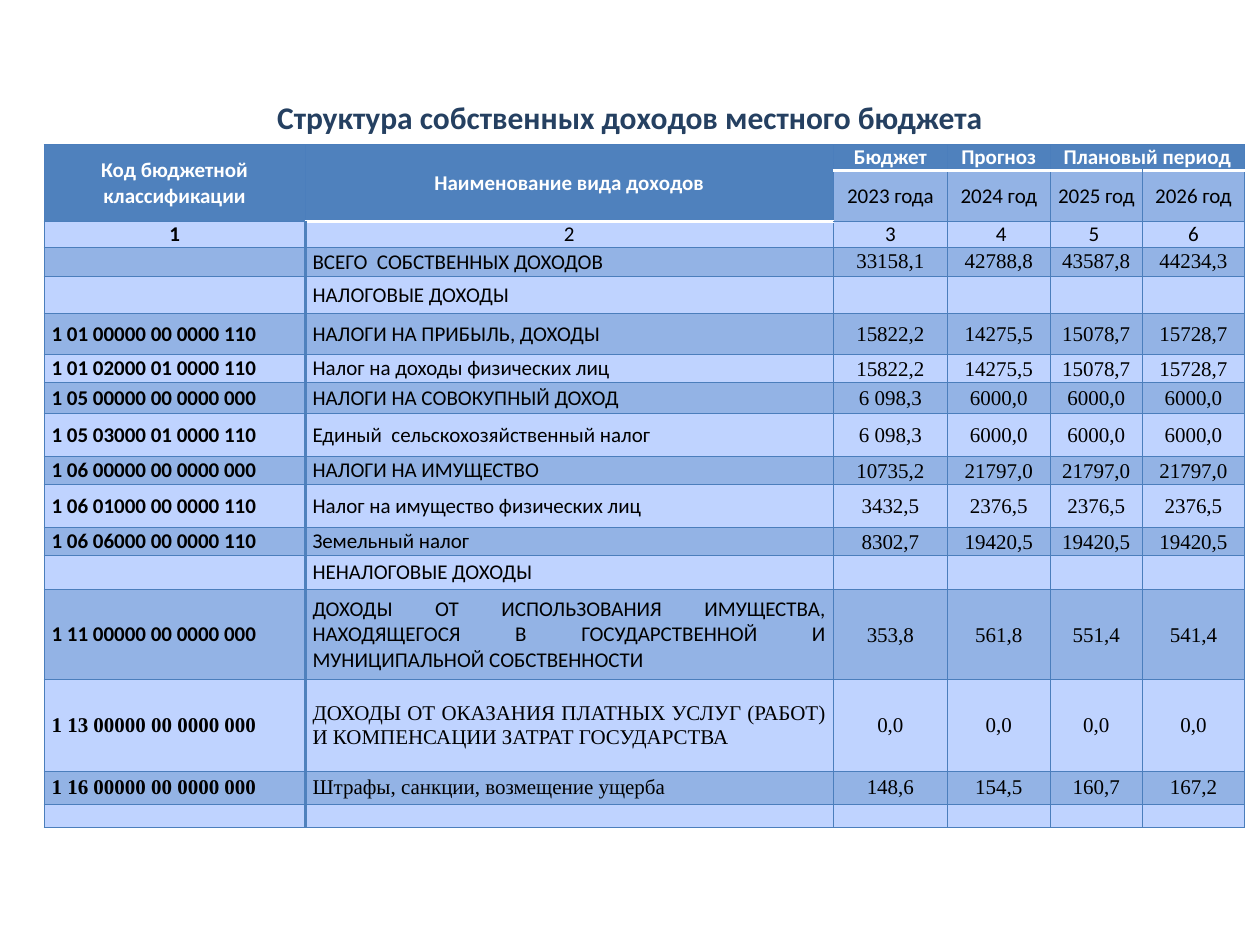
from lxml import etree
from pptx import Presentation
from pptx.dml.color import RGBColor
from pptx.enum import text as tx
from pptx.oxml import ns
from pptx.util import Cm, Pt

HUES = {"head": "4F81BD", "dark": "93B3E5", "light": "BFD3FF", "line": "4B7EBC",
        "white": "FFFFFF", "black": "000000", "title": "254061"}
SANS, SERIF = "Calibri", "Times New Roman"
MID, LOW = tx.MSO_ANCHOR.MIDDLE, tx.MSO_ANCHOR.BOTTOM
CENTER, JUST = tx.PP_ALIGN.CENTER, tx.PP_ALIGN.JUSTIFY
COLS = [5.26, 10.65, 2.3, 2.07, 1.86, 2.06]
HIGH = [0.52, 1.03, 0.52, 0.58, 0.75, 0.83, 0.56, 0.63, 0.87,
        0.56, 0.87, 0.56, 0.69, 1.81, 1.85, 0.67, 0.46]
HEAD = 3
FIRST_SERIF = 14
ROWS = [
    ["Код бюджетной классификации", "Наименование вида доходов",
     "Бюджет", "Прогноз", "Плановый период", ""],
    ["", "", "2023 года", "2024 год", "2025 год", "2026 год"],
    ["1", "2", "3", " 4", "5 ", "6"],
    ["", "ВСЕГО  СОБСТВЕННЫХ ДОХОДОВ", "33158,1", "42788,8", "43587,8", "44234,3"],
    ["", "НАЛОГОВЫЕ ДОХОДЫ", "", "", "", ""],
    ["1 01 00000 00 0000 110", "НАЛОГИ НА ПРИБЫЛЬ, ДОХОДЫ",
     "15822,2", "14275,5", "15078,7", "15728,7"],
    ["1 01 02000 01 0000 110", "Налог на доходы физических лиц",
     "15822,2", "14275,5", "15078,7", "15728,7"],
    ["1 05 00000 00 0000 000", "НАЛОГИ НА СОВОКУПНЫЙ ДОХОД",
     "6 098,3", "6000,0", "6000,0", "6000,0"],
    ["1 05 03000 01 0000 110", "Единый  сельскохозяйственный налог",
     "6 098,3", "6000,0", "6000,0", "6000,0"],
    ["1 06 00000 00 0000 000", "НАЛОГИ НА ИМУЩЕСТВО",
     "10735,2", "21797,0", "21797,0", "21797,0"],
    ["1 06 01000 00 0000 110", "Налог на имущество физических лиц",
     "3432,5", "2376,5", "2376,5", "2376,5"],
    ["1 06 06000 00 0000 110", "Земельный налог",
     "8302,7", "19420,5", "19420,5", "19420,5"],
    ["", "НЕНАЛОГОВЫЕ ДОХОДЫ", "", "", "", ""],
    ["1 11 00000 00 0000 000",
     "ДОХОДЫ ОТ ИСПОЛЬЗОВАНИЯ ИМУЩЕСТВА, НАХОДЯЩЕГОСЯ В "
     "ГОСУДАРСТВЕННОЙ И МУНИЦИПАЛЬНОЙ СОБСТВЕННОСТИ",
     "353,8", "561,8", "551,4", "541,4"],
    ["1 13 00000 00 0000 000",
     "ДОХОДЫ ОТ ОКАЗАНИЯ ПЛАТНЫХ УСЛУГ (РАБОТ) И КОМПЕНСАЦИИ ЗАТРАТ ГОСУДАРСТВА",
     "0,0", "0,0", "0,0", "0,0"],
    ["1 16 00000 00 0000 000", "Штрафы, санкции, возмещение ущерба",
     "148,6", "154,5", "160,7", "167,2"],
    ["", "", "", "", "", ""],
]


def rgb(key):
    """Return the named colour."""
    return RGBColor.from_string(HUES[key])


def add_run(para, words, size, hue, bold, face=SANS):
    """Add one styled run to a paragraph."""
    run = para.add_run()
    run.text = words
    font = run.font
    font.size, font.bold, font.name = Pt(size), bold, face
    font.color.rgb = rgb(hue)


def add_edge(cell, side, hue="line", width=0.75):
    """Draw one border of a cell."""
    props = cell._tc.get_or_add_tcPr()
    line = etree.SubElement(props, ns.qn("a:ln" + side), w=str(Pt(width)))
    fill = etree.SubElement(line, ns.qn("a:solidFill"))
    etree.SubElement(fill, ns.qn("a:srgbClr"), val=HUES[hue])


def is_head(row, col):
    """Tell whether a cell belongs to the solid header."""
    return row == 0 or (row == 1 and col < 2)


def style_cell(cell, row, col):
    """Set the borders and the fill of a cell."""
    edges = {side: ("line", 0.75) for side in "LRTB"}
    if row >= 2 and col < 2:
        edges["R" if col == 0 else "L"] = ("head", 2)
    if (row == 0 and col > 1) or (row < 2 and col == 1):
        edges["B"] = ("white", 2)
    if (row == 1 and col > 1) or (row == 2 and col == 1):
        edges["T"] = ("white", 2)
    for side, look in edges.items():
        add_edge(cell, side, *look)
    cell.fill.solid()
    cell.fill.fore_color.rgb = rgb(
        "head" if is_head(row, col) else "dark" if row % 2 else "light")


def fill_cell(cell, row, col, words):
    """Write the text of a cell."""
    tight = col > 1 and 5 <= row <= 13
    cell.margin_left = cell.margin_right = Cm(0.03 if tight else 0.15)
    cell.margin_top, cell.margin_bottom = Cm(0.02 if tight else 0), 0
    low = row == 2 or (row == 0 and col > 2)
    cell.vertical_anchor = LOW if low else MID
    para = cell.text_frame.paragraphs[0]
    para.alignment = JUST if row >= HEAD and col < 2 else CENTER
    if not words:
        para._p.get_or_add_endParaRPr().set("sz", "1000")
        return
    head = is_head(row, col)
    serif = row >= FIRST_SERIF or (row >= HEAD and col > 1)
    add_run(para, words, 12, "white" if head else "black",
            head or col == 0, SERIF if serif else SANS)


def add_title(slide, left, top, width, height):
    """Place the slide title in its box."""
    frame = slide.shapes.add_textbox(Cm(left), Cm(top), Cm(width), Cm(height)).text_frame
    frame.word_wrap = True
    frame.vertical_anchor = MID
    para = frame.paragraphs[0]
    para.alignment = CENTER
    add_run(para, "Структура собственных доходов местного бюджета", 18, "title", True)


def add_income(slide, left, top):
    """Place the table of budget income."""
    table = slide.shapes.add_table(len(ROWS), len(COLS), Cm(left), Cm(top),
                                   Cm(sum(COLS)), Cm(sum(HIGH))).table
    table.horz_banding = False
    for part, width in zip(table.columns, COLS):
        part.width = Cm(width)
    for part, height in zip(table.rows, HIGH):
        part.height = Cm(height)
    for row, line in enumerate(ROWS):
        for col, words in enumerate(line):
            cell = table.cell(row, col)
            style_cell(cell, row, col)
            fill_cell(cell, row, col, words)
    for first, last in [((0, 0), (1, 0)), ((0, 1), (1, 1)), ((0, 4), (0, 5))]:
        table.cell(*first).merge(table.cell(*last))


def main():
    """Build and save the slide."""
    deck = Presentation()
    deck.slide_width, deck.slide_height = Cm(25.4), Cm(19.05)
    slide = deck.slides.add_slide(deck.slide_layouts[6])
    add_title(slide, 1.27, 0.76, 22.86, 3.18)
    add_income(slide, 0.89, 2.92)
    deck.save("out.pptx")


if __name__ == "__main__":
    main()
